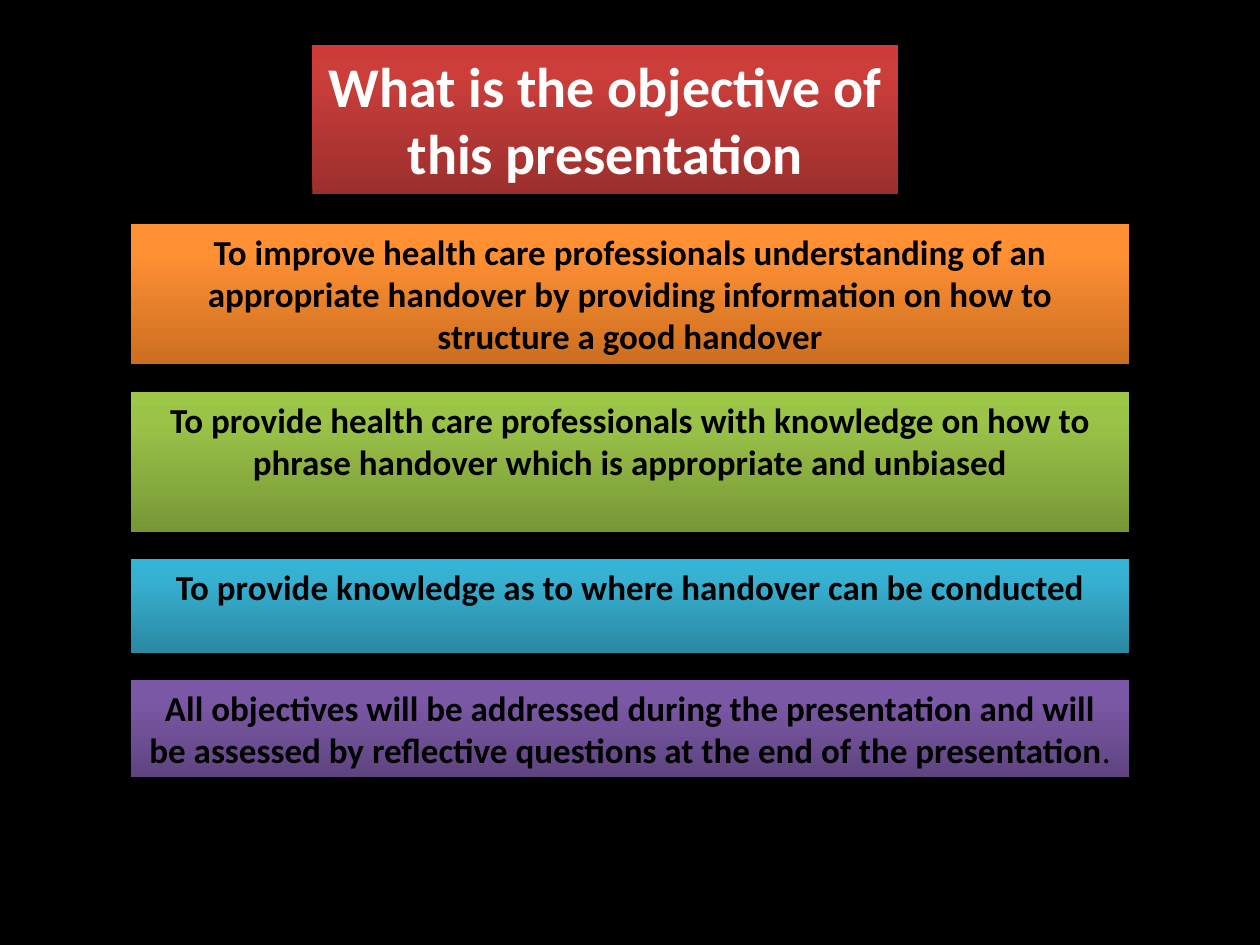
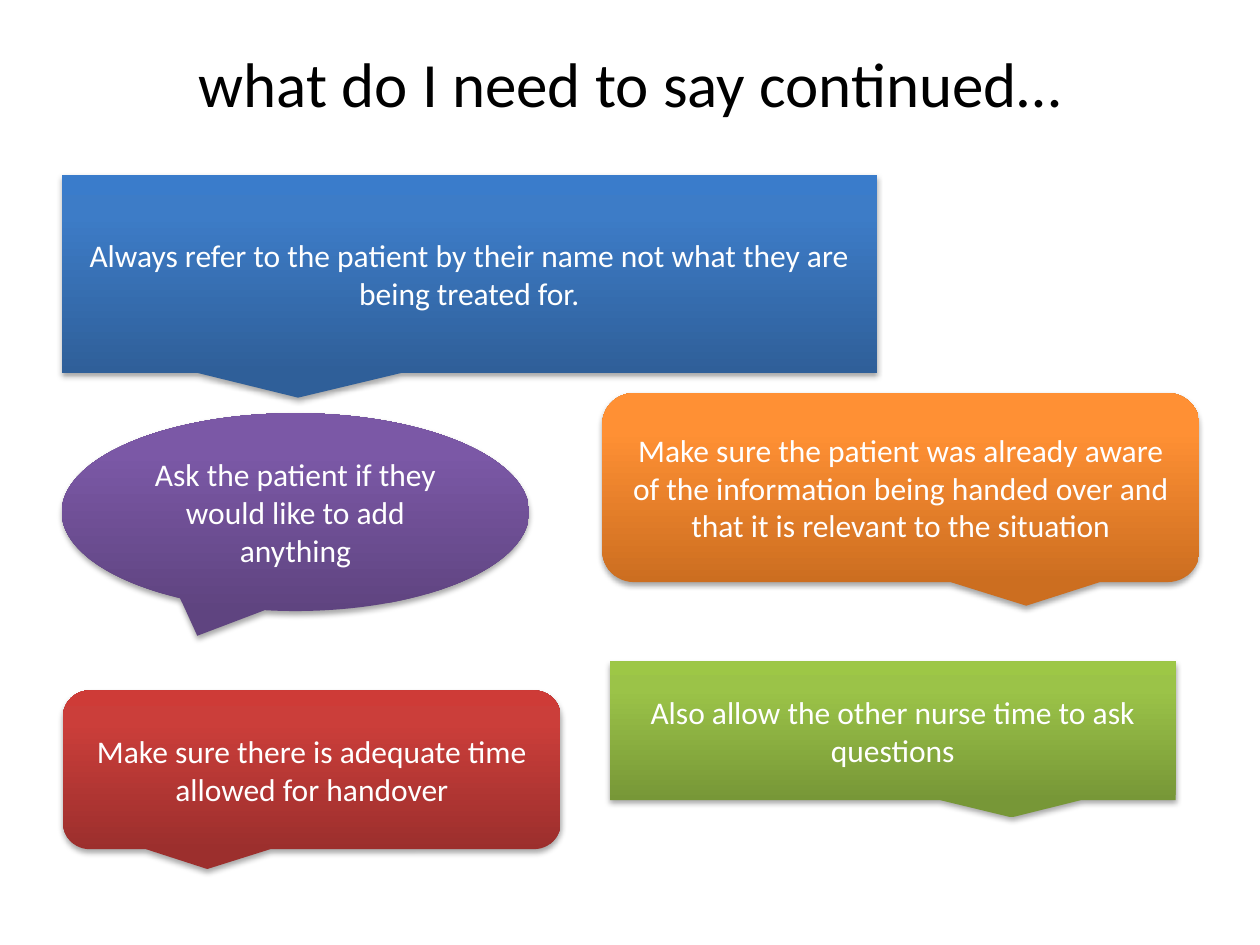
import copy
import pptx
import pptx.util
import pptx.dml.color
import pptx.enum.shapes
import pptx.enum.text
import pptx.oxml
import pptx.oxml.ns

FONT = "Calibri"
BLACK, WHITE = "000000", "FFFFFF"
GRADIENTS = {
    "red": ("9C2F2D", "CB3E3A", "CE3B37"),
    "orange": ("CC6E20", "FF9034", "FF9136"),
    "green": ("779737", "9BC348", "9DC746"),
    "teal": ("2A88A2", "37B1D2", "34B4D6"),
    "purple": ("5F4480", "7B58A6", "7C57A8"),
    "blue": ("2F5F99", "3D7CC7", "3A7CCB"),
}
STOPS = (0, 0.8, 1)
SHADOW = (
    '<a:outerShdw xmlns:a="http://schemas.openxmlformats.org/drawingml/2006/main" '
    'blurRad="40000" dist="23000" dir="5400000" rotWithShape="0">'
    '<a:srgbClr val="000000"><a:alpha val="35000"/></a:srgbClr></a:outerShdw>'
)

SHAPES = pptx.enum.shapes.MSO_SHAPE
ANCHOR = pptx.enum.text.MSO_ANCHOR

OBJECTIVES_TITLE = "What is the objective of this presentation"
OBJECTIVES = [
    ("orange", 1.11, ["To improve health care professionals understanding of an appropriate "
                      "handover by providing information on how to structure a good handover"]),
    ("green", 1.11, ["To provide health care professionals with knowledge on how to phrase "
                     "handover which is appropriate and unbiased"]),
    ("teal", 0.74, ["To provide knowledge as to where handover can be conducted"]),
    ("purple", 0.77, ["All objectives will be addressed during the presentation and will be "
                      "assessed by reflective questions at the end of the presentation", "."]),
]
BAR_LEFT, BAR_TOP, BAR_WIDTH, BAR_GAP = 1.04, 1.78, 7.92, 0.22

ADVICE_TITLE = "what do I need to say continued…"
LEFT_TAIL, RIGHT_TAIL = -0.21, 0.21
ADVICE = [
    ("blue", SHAPES.RECTANGULAR_CALLOUT, LEFT_TAIL, (0.49, 1.39, 6.47, 1.57),
     "Always refer to the patient by their name not what they are being treated for."),
    ("orange", SHAPES.ROUNDED_RECTANGULAR_CALLOUT, RIGHT_TAIL, (4.78, 3.12, 4.74, 1.5),
     "Make sure the patient was already aware of the information being handed over "
     "and that it is relevant to the situation"),
    ("purple", SHAPES.OVAL_CALLOUT, LEFT_TAIL, (0.49, 3.28, 3.71, 1.57),
     "Ask the patient if they would like to add anything"),
    ("green", SHAPES.RECTANGULAR_CALLOUT, RIGHT_TAIL, (4.84, 5.25, 4.49, 1.1),
     "Also allow the other nurse time to ask questions"),
    ("red", SHAPES.ROUNDED_RECTANGULAR_CALLOUT, LEFT_TAIL, (0.5, 5.48, 3.95, 1.26),
     "Make sure there is adequate time allowed for handover"),
]


def color(value):
    return pptx.dml.color.RGBColor.from_string(value)


def inches(place):
    return [pptx.util.Inches(length) for length in place]


def paint(shape, name):
    shape.fill.gradient()
    shape.fill.gradient_angle = 90
    stop_list = shape._element.spPr.find(".//" + pptx.oxml.ns.qn("a:gsLst"))
    stop_list.append(copy.deepcopy(stop_list[0]))
    for stop, position, value in zip(shape.fill.gradient_stops, STOPS, GRADIENTS[name]):
        stop.position = position
        stop.color.rgb = color(value)
    shape.line.fill.background()
    shape.shadow.inherit = False
    effects = shape._element.spPr.find(pptx.oxml.ns.qn("a:effectLst"))
    effects.append(pptx.oxml.parse_xml(SHADOW))


def write(shape, pieces, size, value, bold=False, anchor=ANCHOR.TOP):
    frame = shape.text_frame
    frame.word_wrap = True
    frame.auto_size = pptx.enum.text.MSO_AUTO_SIZE.NONE
    frame.vertical_anchor = anchor
    para = frame.paragraphs[0]
    para.alignment = pptx.enum.text.PP_ALIGN.CENTER
    for index, piece in enumerate(pieces):
        span = para.add_run()
        span.text = piece
        span.font.name = FONT
        span.font.size = pptx.util.Pt(size)
        span.font.bold = bold and index == 0
        span.font.color.rgb = color(value)


def add_page(deck, background, title, place, size, value, bold=False):
    page = deck.slides.add_slide(deck.slide_layouts.get_by_name("Title Only"))
    page.background.fill.solid()
    page.background.fill.fore_color.rgb = color(background)
    heading = page.shapes.title
    heading.left, heading.top, heading.width, heading.height = inches(place)
    write(heading, [title], size, value, bold)
    return page


def add_objectives(deck):
    page = add_page(deck, BLACK, OBJECTIVES_TITLE, (2.48, 0.36, 4.65, 1.18), 32, WHITE, True)
    paint(page.shapes.title, "red")
    top = BAR_TOP
    for name, height, pieces in OBJECTIVES:
        bar = page.shapes.add_shape(SHAPES.RECTANGLE, *inches((BAR_LEFT, top, BAR_WIDTH, height)))
        paint(bar, name)
        write(bar, pieces, 20, BLACK, bold=True)
        top += height + BAR_GAP


def add_advice(deck):
    page = add_page(deck, WHITE, ADVICE_TITLE, (0.5, 0.3, 9, 1.25), 36, BLACK)
    for name, kind, tail, place, text in ADVICE:
        callout = page.shapes.add_shape(kind, *inches(place))
        callout.adjustments[0] = tail
        paint(callout, name)
        write(callout, [text], 18, WHITE, anchor=ANCHOR.MIDDLE)


def main():
    deck = pptx.Presentation()
    deck.slide_width, deck.slide_height = inches((10, 7.5))
    add_objectives(deck)
    add_advice(deck)
    deck.save("out.pptx")


if __name__ == "__main__":
    main()
